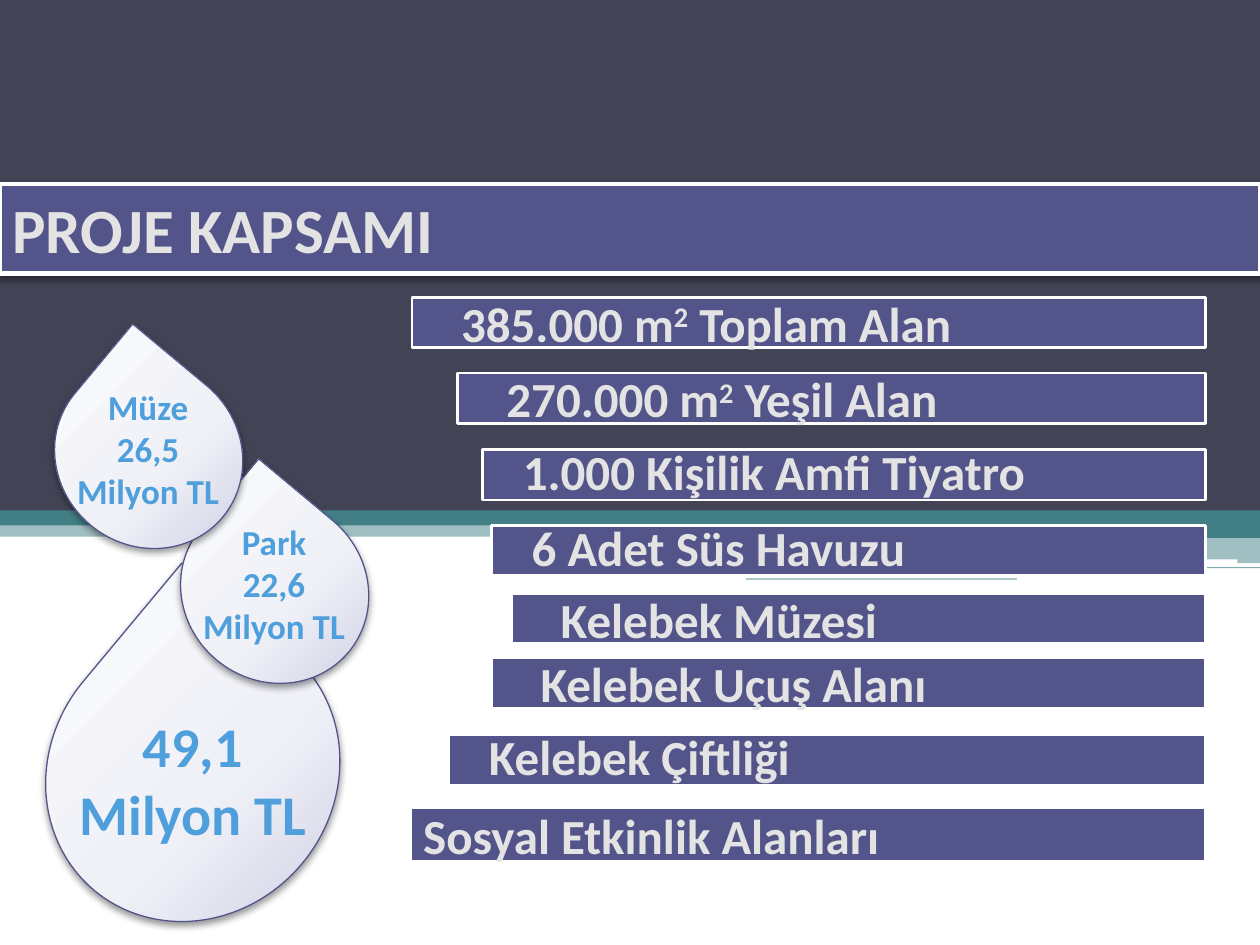
from lxml import etree
from pptx import Presentation
from pptx.dml.color import RGBColor
from pptx.enum import shapes, text
from pptx.oxml import parse_xml
from pptx.oxml.ns import nsdecls, qn
from pptx.util import Inches, Pt

FONT = "Calibri"
COLORS = {
    "teal": "438086", "slate": "424456", "white": "FFFFFF", "bar": "53548A",
    "bar_text": "E3E3E3", "outline": "3D405C", "drop_text": "4E9FDB", "shadow": "000000",
}
DROP_STOPS = [(0, "FEFEFE"), (55, "F0F1F7"), (100, "C2C2DD")]
RECT = shapes.MSO_SHAPE.RECTANGLE
ROUNDED = shapes.MSO_SHAPE.ROUNDED_RECTANGLE

# kind, (left, top, width, height), colour, opacity in percent
BACKDROP = [
    (RECT, (5.92, 4.17, 4.08, 0.1), "teal", 100),
    (RECT, (5.92, 4.26, 4.08, 0.21), "teal", 50),
    (RECT, (5.92, 4.5, 4.08, 0.01), "teal", 65),
    (RECT, (5.92, 4.55, 2.15, 0.02), "teal", 60),
    (RECT, (5.92, 4.59, 2.15, 0.01), "teal", 65),
    (ROUNDED, (8.07, 4.44, 1.75, 0.04), "white", 100),
    (RECT, (0, 3.99, 10, 0.27), "teal", 50),
    (RECT, (0, 4.02, 10, 0.15), "teal", 100),
    (RECT, (7.01, 3.98, 2.99, 0.27), "teal", 100),
    (RECT, (0, 0, 10, 4.05), "slate", 100),
]

TITLE = "PROJE KAPSAMI"

# left, top, height, left inset, line spacing, runs (superscript marked by "^")
BARS = [
    (3.27, 2.36, 0.4, 0.39, 1, ["385.000 m", "^2", " Toplam Alan"]),
    (3.63, 2.96, 0.4, 0.39, 1, ["270.000 m", "^2", " Yeşil Alan"]),
    (3.83, 3.57, 0.4, 0.32, 0.9, ["1.000 Kişilik Amfi Tiyatro"]),
    (3.9, 4.17, 0.4, 0.32, 0.9, ["6 Adet Süs Havuzu"]),
    (4.06, 4.71, 0.4, 0.39, 1, ["Kelebek Müzesi"]),
    (3.9, 5.22, 0.4, 0.39, 1, ["Kelebek Uçuş Alanı"]),
    (3.56, 5.83, 0.4, 0.32, 0.9, ["Kelebek Çiftliği"]),
    (3.26, 6.41, 0.43, 0.1, 1, ["Sosyal Etkinlik Alanları"]),
]
BARS_RIGHT = 9.57

# drop box, label box, text size, paragraphs
DROPS = [
    ((0.31, 5, 2.44, 2.26), (0.39, 5.6, 2.28, 1.18), 32, ["49,1 Milyon TL"]),
    ((1.46, 3.92, 1.44, 1.53), (1.4, 4.08, 1.55, 1.11), 20, ["Park", "22,6 Milyon TL"]),
    ((0.46, 2.85, 1.44, 1.53), (0.4, 3.01, 1.55, 1.11), 20, ["Müze", "26,5 Milyon TL"]),
]


def rgb(name):
    return RGBColor.from_string(COLORS[name])


def add_shape(slide, kind, box, fill=None, line=None, line_width=1):
    shape = slide.shapes.add_shape(kind, *map(Inches, box))
    shape.shadow.inherit = False
    if fill:
        shape.fill.solid()
        shape.fill.fore_color.rgb = rgb(fill)
    if line:
        shape.line.color.rgb = rgb(line)
        shape.line.width = Pt(line_width)
    else:
        shape.line.fill.background()
    return shape


def set_opacity(shape, percent):
    color = shape.fill._xPr.find(qn("a:solidFill"))[0]
    etree.SubElement(color, qn("a:alpha"), val=str(percent * 1000))


def add_soft_shadow(shape):
    effects = shape._element.spPr.find(qn("a:effectLst"))
    effects.append(parse_xml(
        f'<a:outerShdw {nsdecls("a")} blurRad="{Pt(4.1)}" dist="{Pt(2)}" dir="5400000" '
        f'rotWithShape="0"><a:srgbClr val="{COLORS["shadow"]}"><a:alpha val="40000"/>'
        '</a:srgbClr></a:outerShdw>'))


def set_drop_gradient(shape):
    stops = "".join(f'<a:gs pos="{position * 1000}"><a:srgbClr val="{color}"/></a:gs>'
                    for position, color in DROP_STOPS)
    gradient = parse_xml(
        f'<a:gradFill {nsdecls("a")} rotWithShape="1"><a:gsLst>{stops}</a:gsLst>'
        '<a:path path="circle"><a:fillToRect l="-40000" t="-90000" r="140000" b="190000"/>'
        '</a:path></a:gradFill>')
    shape._element.spPr.find(qn("a:prstGeom")).addnext(gradient)


def add_run(paragraph, words, size, color, outlined=False):
    run = paragraph.add_run()
    run.text = words.lstrip("^")
    run.font.name, run.font.size, run.font.bold = FONT, Pt(size), True
    run.font.color.rgb = rgb(color)
    properties = run.font._element
    if words.startswith("^"):
        properties.set("baseline", "30000")
    if outlined:
        properties.insert(0, parse_xml(
            f'<a:ln {nsdecls("a")} w="{Pt(1)}"><a:solidFill>'
            f'<a:srgbClr val="{COLORS["outline"]}"/></a:solidFill></a:ln>'))


def add_bar(slide, box, runs, size, line_width, anchor, inset=0.1, spacing=1):
    bar = add_shape(slide, RECT, box, "bar", "white", line_width)
    frame = bar.text_frame
    frame.word_wrap = True
    frame.vertical_anchor = anchor
    frame.margin_left = Inches(inset)
    paragraph = frame.paragraphs[0]
    paragraph.alignment = text.PP_ALIGN.LEFT
    paragraph.line_spacing = spacing
    for words in runs:
        add_run(paragraph, words, size, "bar_text", outlined=True)
    return bar


def add_drop(slide, box, label_box, size, paragraphs):
    drop = add_shape(slide, shapes.MSO_SHAPE.TEAR, box, line="bar", line_width=0.75)
    drop.rotation = 309.8
    set_drop_gradient(drop)
    add_soft_shadow(drop)
    frame = slide.shapes.add_textbox(*map(Inches, label_box)).text_frame
    frame.word_wrap = True
    for index, words in enumerate(paragraphs):
        paragraph = frame.add_paragraph() if index else frame.paragraphs[0]
        paragraph.alignment = text.PP_ALIGN.CENTER
        add_run(paragraph, words, size, "drop_text")


def main():
    presentation = Presentation()
    presentation.slide_width, presentation.slide_height = Inches(10), Inches(7.5)
    slide = presentation.slides.add_slide(presentation.slide_layouts[6])
    slide.background.fill.solid()
    slide.background.fill.fore_color.rgb = rgb("white")

    for kind, box, color, opacity in BACKDROP:
        band = add_shape(slide, kind, box, color)
        if opacity < 100:
            set_opacity(band, opacity)

    title = add_bar(slide, (0, 1.46, 10, 0.71), [TITLE], 36, 2.5, text.MSO_ANCHOR.TOP)
    add_soft_shadow(title)
    for left, top, height, inset, spacing, runs in BARS:
        add_bar(slide, (left, top, BARS_RIGHT - left, height), runs, 28, 1.5,
                text.MSO_ANCHOR.MIDDLE, inset, spacing)
    for drop in DROPS:
        add_drop(slide, *drop)

    presentation.save("out.pptx")


if __name__ == "__main__":
    main()
